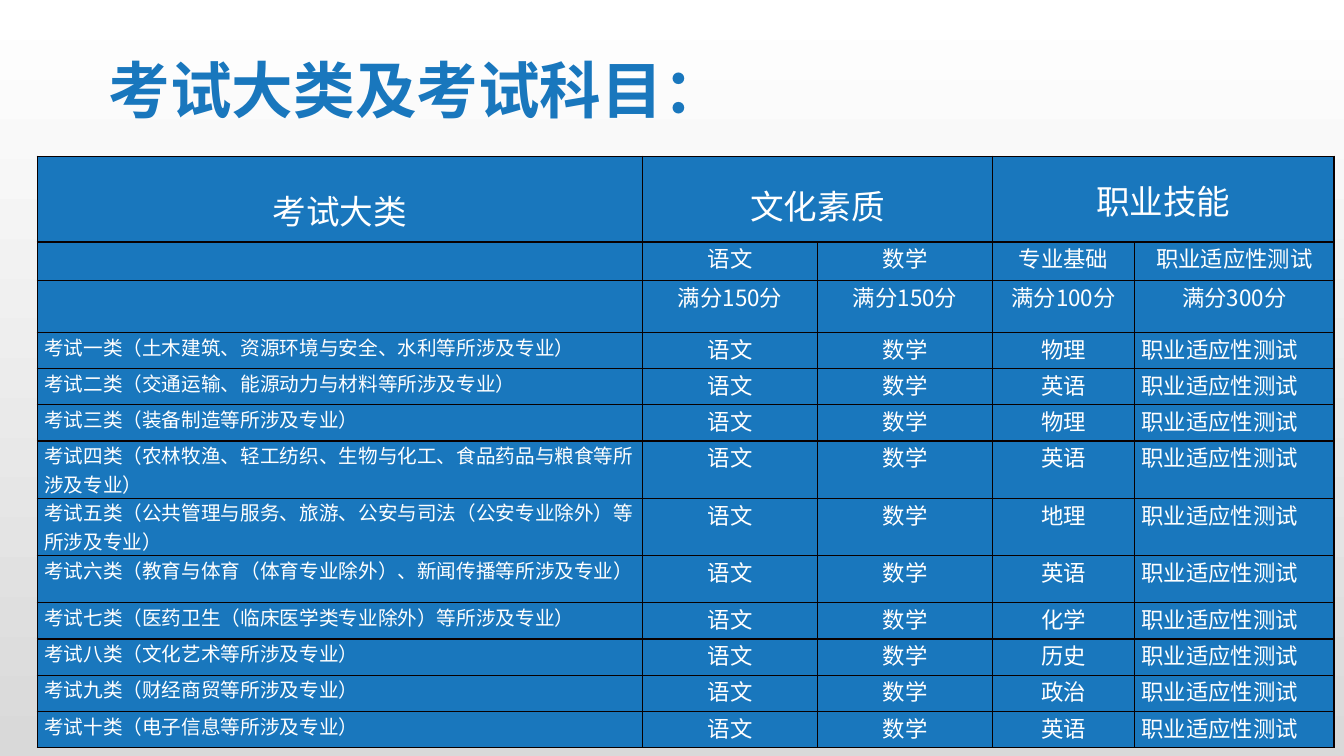
from lxml import etree
from pptx import Presentation
from pptx.dml.color import RGBColor
from pptx.enum.text import MSO_ANCHOR, PP_ALIGN
from pptx.oxml.ns import qn
from pptx.util import Pt

CENTER, LEFT = PP_ALIGN.CENTER, PP_ALIGN.LEFT
MIDDLE = MSO_ANCHOR.MIDDLE

THEME = {
    "blue": "1977BD", "white": "FFFFFF", "grey": "D9D9D9", "border": "080000",
    "title_font": "Arial", "font": "Noto Sans CJK SC",
    "title": 44, "head": 24, "body": 16, "category": 14,
}


def write(p, text, size, color, name, bold=False):
    r = p.add_run()
    r.text = text
    for key, value in {"size": Pt(size), "name": name, "bold": bold}.items():
        setattr(r.font, key, value)
    r.font.color.rgb = RGBColor.from_string(THEME[color])
    etree.SubElement(r.font._element, qn("a:ea"), typeface=THEME["font"])


def style_cell(cell):
    margins = {"margin_left": 5, "margin_right": 5, "margin_top": 0, "margin_bottom": 0}
    for key, value in margins.items():
        setattr(cell, key, Pt(value))
    tc_pr = cell._tc.get_or_add_tcPr()
    for side in ("a:lnL", "a:lnR", "a:lnT", "a:lnB"):
        ln = etree.SubElement(tc_pr, qn(side), w=str(Pt(1)))
        fill = etree.SubElement(ln, qn("a:solidFill"))
        etree.SubElement(fill, qn("a:srgbClr"), val=THEME["border"])
    cell.fill.solid()
    cell.fill.fore_color.rgb = RGBColor.from_string(THEME["blue"])


prs = Presentation()
prs.slide_width, prs.slide_height = Pt(960), Pt(540)
s = prs.slides.add_slide(prs.slide_layouts[6])

bg = s.background.fill
bg.gradient()
bg.gradient_angle = 270
for stop, color, position in zip(bg.gradient_stops, ("white", "grey"), (0, 1)):
    stop.color.rgb = RGBColor.from_string(THEME[color])
    stop.position = position

HEADS = [(0, "考试大类", 1.6), (1, "文化素质", 1.5), (3, "职业技能", 1.4)]
SUBJECTS = ["", "语文", "数学", "专业基础", "职业适应性测试"]
SCORES = ["", "满分150分", "满分150分", "满分100分", "满分300分"]
CATEGORIES = [
    ("考试一类（土木建筑、资源环境与安全、水利等所涉及专业）", "物理"),
    ("考试二类（交通运输、能源动力与材料等所涉及专业）", "英语"),
    ("考试三类（装备制造等所涉及专业）", "物理"),
    ("考试四类（农林牧渔、轻工纺织、生物与化工、食品药品与粮食等所涉及专业）", "英语"),
    ("考试五类（公共管理与服务、旅游、公安与司法（公安专业除外）等所涉及专业）", "地理"),
    ("考试六类（教育与体育（体育专业除外）、新闻传播等所涉及专业）", "英语"),
    ("考试七类（医药卫生（临床医学类专业除外）等所涉及专业）", "化学"),
    ("考试八类（文化艺术等所涉及专业）", "历史"),
    ("考试九类（财经商贸等所涉及专业）", "政治"),
    ("考试十类（电子信息等所涉及专业）", "英语"),
]
rows = [SUBJECTS, SCORES]
rows += [[category, "语文", "数学", subject, "职业适应性测试"] for category, subject in CATEGORIES]
COL_WIDTHS = [432.4, 125, 125, 101.5, 142.5]
ROW_HEIGHTS = [61.2, 27.8, 37] + [25.8] * 3 + [36] * 2 + [34] + [25.8] * 4

frame = s.shapes.add_table(len(ROW_HEIGHTS), len(COL_WIDTHS), Pt(26.6), Pt(111.6),
                           Pt(sum(COL_WIDTHS)), Pt(sum(ROW_HEIGHTS)))
table = frame.table
table.first_row = table.horz_banding = False
for column, width in zip(table.columns, COL_WIDTHS):
    column.width = Pt(width)
for row, height in zip(table.rows, ROW_HEIGHTS):
    row.height = Pt(height)
    for cell in row.cells:
        style_cell(cell)

for col, text, spacing in HEADS:
    if col:
        table.cell(0, col).merge(table.cell(0, col + 1))
    p = table.cell(0, col).text_frame.paragraphs[0]
    p.alignment, p.line_spacing = CENTER, spacing
    write(p, text, THEME["head"], "white", THEME["font"])

for i, texts in enumerate(rows, 1):
    for j, text in enumerate(texts):
        if text:
            p = table.cell(i, j).text_frame.paragraphs[0]
            p.alignment = LEFT if i > 2 and j in (0, 4) else CENTER
            size = THEME["body"] if j else THEME["category"]
            write(p, text, size, "white", THEME["font"])

sp = s.shapes.add_textbox(Pt(70.6), Pt(33), Pt(613.4), Pt(60.5))
tf = sp.text_frame
tf.word_wrap = True
tf.vertical_anchor = MIDDLE
write(tf.paragraphs[0], "考试大类及考试科目：", THEME["title"], "blue", THEME["title_font"], bold=True)

prs.save("out.pptx")
